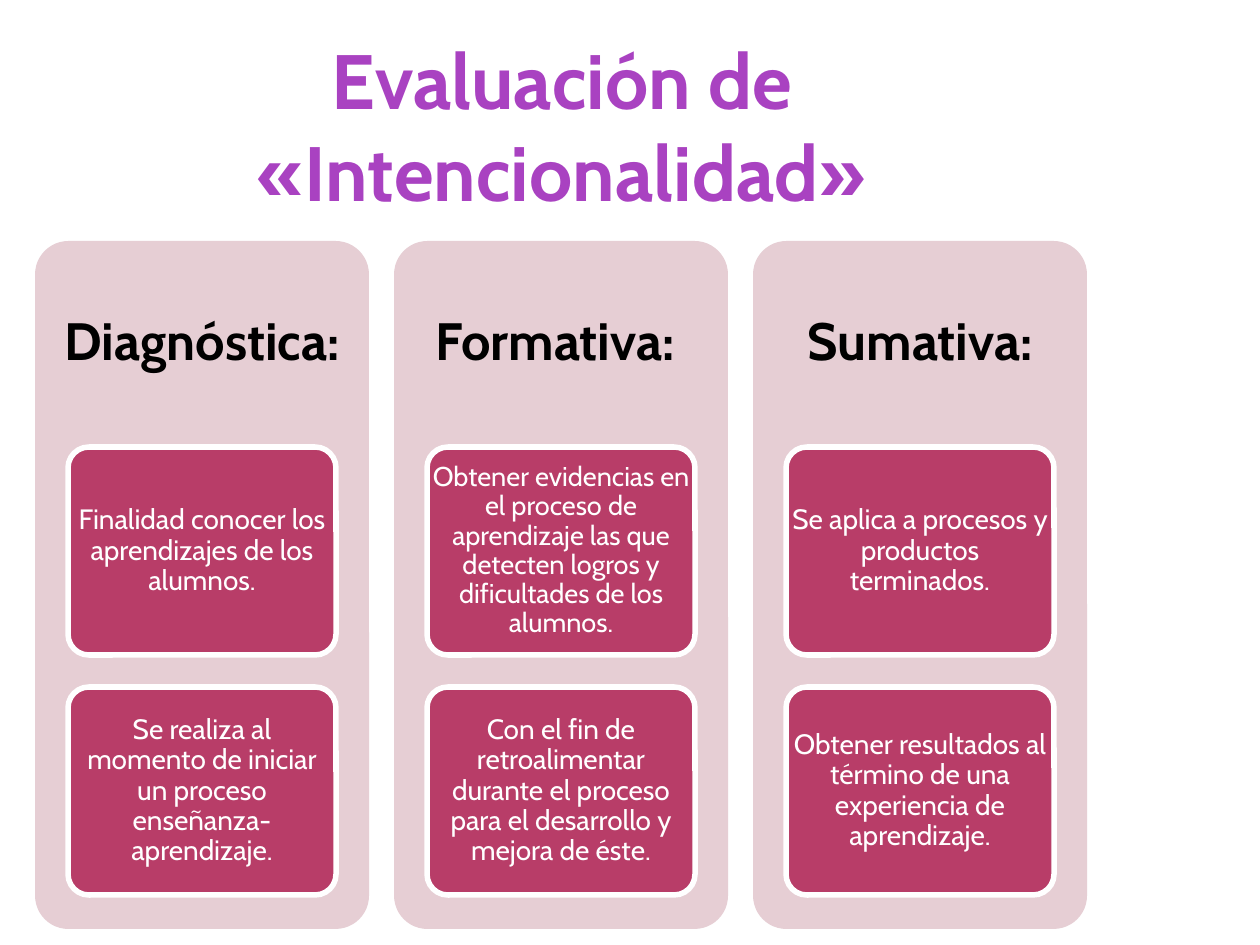
from pptx import Presentation
from pptx import util as u
from pptx.dml.color import RGBColor
from pptx.enum import shapes, text

PX_PER_INCH = 126
FONT = "Cabin"
COLORS = {
    "title": "A942C1",
    "card": "E6CED4",
    "item": "B83D68",
    "heading": "000000",
    "white": "FFFFFF",
}

# Heading, item size in points, items
TYPES = [
    ("Diagnóstica:", (16, 16), (
        "Finalidad conocer los aprendizajes de los alumnos.",
        "Se realiza al momento de iniciar un proceso enseñanza-aprendizaje.",
    )),
    ("Formativa: ", (15.5, 16), (
        "Obtener evidencias en el proceso de aprendizaje las que detecten "
        "logros y dificultades de los alumnos.",
        "Con el fin de retroalimentar durante el proceso para el desarrollo "
        "y mejora de éste.",
    )),
    ("Sumativa:", (16, 16), (
        "Se aplica a procesos y productos terminados.",
        "Obtener resultados al término de una experiencia de aprendizaje.",
    )),
]


def px(n):
    return u.Emu(round(n * 914400 / PX_PER_INCH))


def color(name):
    return RGBColor.from_string(COLORS[name])


def add_run(paragraph, words, size, color_name, bold=False):
    paragraph.alignment = text.PP_ALIGN.CENTER
    run = paragraph.add_run()
    run.text = words
    run.font.name = FONT
    run.font.size = u.Pt(size)
    run.font.bold = bold
    run.font.color.rgb = color(color_name)


def add_panel(slide, box, fill, outlined=False):
    panel = slide.shapes.add_shape(
        shapes.MSO_SHAPE.ROUNDED_RECTANGLE, *map(px, box))
    panel.adjustments[0] = 0.1
    panel.shadow.inherit = False
    panel.fill.solid()
    panel.fill.fore_color.rgb = color(fill)
    if outlined:
        panel.line.color.rgb = color("white")
        panel.line.width = u.Pt(3.15)
    else:
        panel.line.fill.background()


def add_label(slide, box, words, size, color_name, inset, bold=False):
    frame = slide.shapes.add_textbox(*map(px, box)).text_frame
    frame.word_wrap = True
    frame.vertical_anchor = text.MSO_ANCHOR.MIDDLE
    frame.margin_left = frame.margin_right = px(inset)
    frame.margin_top = frame.margin_bottom = px(min(inset, 4))
    frame.paragraphs[0].line_spacing = 0.9
    add_run(frame.paragraphs[0], words, size, color_name, bold)


def add_title(slide, box, lines):
    title = slide.shapes.title
    title.left, title.top, title.width, title.height = map(px, box)
    frame = title.text_frame
    frame.auto_size = text.MSO_AUTO_SIZE.NONE
    frame.word_wrap = True
    frame.vertical_anchor = text.MSO_ANCHOR.TOP
    for i, line in enumerate(lines):
        paragraph = frame.add_paragraph() if i else frame.paragraphs[0]
        paragraph.space_before = u.Pt(0)
        add_run(paragraph, line, 44, "title", bold=True)


def add_card(slide, box, heading, sizes, items):
    left, top, width, height = box
    heading_height, side, item_height, item_pitch = 206, 33, 208, 240
    add_panel(slide, box, "card")
    add_label(slide, (left, top, width, heading_height), heading, 30,
              "heading", inset=15, bold=True)
    # Items stacked under the heading
    for i, (size, item) in enumerate(zip(sizes, items)):
        item_box = (left + side, top + heading_height + i * item_pitch,
                    width - 2 * side, item_height)
        add_panel(slide, item_box, "item", outlined=True)
        add_label(slide, item_box, item, size, "white", inset=5)


def main():
    deck = Presentation()
    deck.slide_width, deck.slide_height = px(1260), px(945)
    slide = deck.slides.add_slide(deck.slide_layouts[5])

    add_title(slide, (25, 26, 1091, 226),
              ("Evaluación de ", "«Intencionalidad» "))

    # One card for each type of evaluation
    card_pitch = 359
    for i, (heading, sizes, items) in enumerate(TYPES):
        add_card(slide, (35 + i * card_pitch, 241, 334, 688),
                 heading, sizes, items)

    deck.save("out.pptx")


if __name__ == "__main__":
    main()
